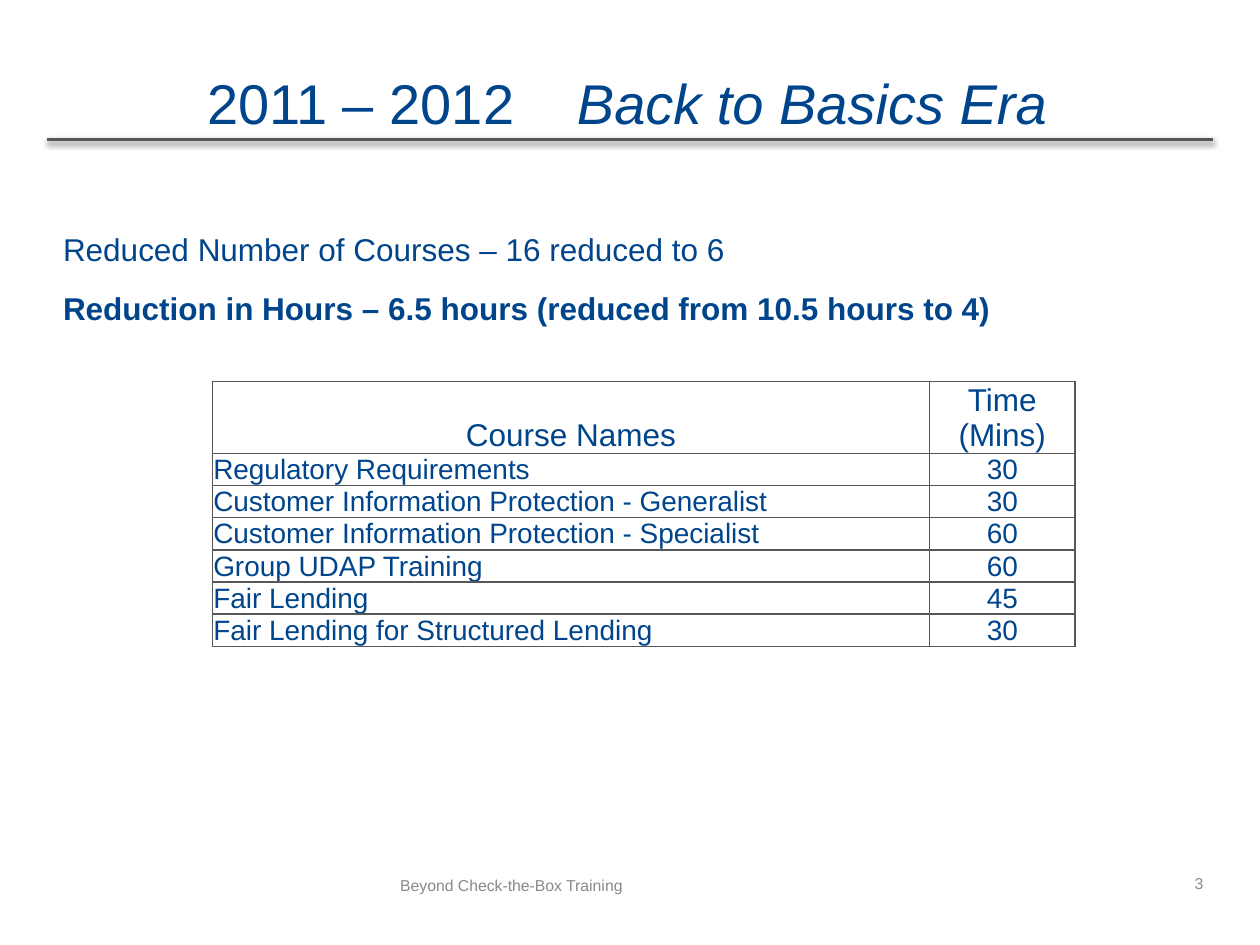
from lxml import etree
from pptx import Presentation
from pptx import util as u
from pptx.dml.color import RGBColor
from pptx.enum import shapes, text
from pptx.oxml import parse_xml
from pptx.oxml.ns import nsdecls, qn

BLUE = RGBColor(0x00, 0x45, 0x8B)
GRAY = RGBColor(0x89, 0x89, 0x89)
RULE = RGBColor(0x57, 0x57, 0x57)

COURSES = [
    ("Regulatory Requirements", 30),
    ("Customer Information Protection - Generalist", 30),
    ("Customer Information Protection - Specialist", 60),
    ("Group UDAP Training", 60),
    ("Fair Lending", 45),
    ("Fair Lending for Structured Lending", 30),
]


class Deck:
    font = "Arial"

    def __init__(self, width, height):
        self.prs = Presentation()
        self.prs.slide_width, self.prs.slide_height = u.Cm(width), u.Cm(height)
        self.s = self.prs.slides.add_slide(self.prs.slide_layouts[1])

    def style(self, p, size, color=BLUE, align=text.PP_ALIGN.LEFT):
        p.alignment = align
        for r in p.runs:
            r.font.name, r.font.size = self.font, u.Pt(size)
            r.font.color.rgb = color

    def frame(self, sp, box):
        """Place a text shape and return its text frame without insets."""
        sp.left, sp.top, sp.width, sp.height = (u.Cm(v) for v in box)
        tf = sp.text_frame
        tf.word_wrap = True
        tf.auto_size = text.MSO_AUTO_SIZE.NONE
        tf.vertical_anchor = text.MSO_ANCHOR.TOP
        tf.margin_left = tf.margin_top = tf.margin_right = tf.margin_bottom = 0
        return tf

    def title(self, years, era, box, size=32):
        p = self.frame(self.s.shapes.title, box).paragraphs[0]
        p.line_spacing = 0.9
        for words in (years, " ", era):
            p.add_run().text = words
        self.style(p, size, align=text.PP_ALIGN.CENTER)
        gap, name = p.runs[1:]
        gap.font._element.set("spc", "2670")  # widens the one space
        name.font.italic = True

    def body(self, lines, box, size=18):
        tf = self.frame(self.s.placeholders[1], box)
        tf.text = "\n".join(lines)
        for i, p in enumerate(tf.paragraphs):
            pPr = p._p.get_or_add_pPr()
            pPr.set("marL", "0")
            pPr.set("indent", "0")
            etree.SubElement(pPr, qn("a:buNone"))
            p.space_before = u.Pt(12 if i else 0)
            self.style(p, size)
        tf.paragraphs[-1].runs[0].font.bold = True

    def note(self, words, box, size=9):
        tf = self.frame(self.s.shapes.add_textbox(0, 0, 0, 0), box)
        tf.text = words
        self.style(tf.paragraphs[0], size, GRAY, text.PP_ALIGN.RIGHT)

    def rule(self, x1, x2, y):
        """Draw a horizontal line with a soft shadow below it."""
        ln = self.s.shapes.add_connector(
            shapes.MSO_CONNECTOR.STRAIGHT, u.Cm(x1), u.Cm(y), u.Cm(x2), u.Cm(y))
        ln.line.color.rgb, ln.line.width = RULE, u.Pt(2)
        ln._element.spPr.append(parse_xml(
            f'<a:effectLst {nsdecls("a")}>'
            f'<a:outerShdw blurRad="{u.Pt(3.1)}" dist="{u.Pt(1.6)}" dir="5400000"'
            ' rotWithShape="0"><a:srgbClr val="000000"><a:alpha val="38000"/>'
            '</a:srgbClr></a:outerShdw></a:effectLst>'))

    def borders(self, cell):
        tcPr = cell._tc.get_or_add_tcPr()
        for i, side in enumerate(("lnL", "lnR", "lnT", "lnB")):
            tcPr.insert(i, parse_xml(
                f'<a:{side} {nsdecls("a")} w="{u.Pt(1)}"><a:solidFill>'
                f'<a:srgbClr val="{RULE}"/></a:solidFill></a:{side}>'))

    def table(self, rows, left, top, widths, heights):
        t = self.s.shapes.add_table(
            len(rows), len(widths), u.Cm(left), u.Cm(top),
            u.Cm(sum(widths)), u.Cm(sum(heights))).table
        t.first_row = t.horz_banding = False
        for col, w in zip(t.columns, widths):
            col.width = u.Cm(w)
        for i, (row, h) in enumerate(zip(rows, heights)):
            t.rows[i].height = u.Cm(h)
            for j, value in enumerate(row):
                cell = t.cell(i, j)
                name = i > 0 and j == 0
                cell.text = str(value)
                cell.margin_left = cell.margin_right = cell.margin_top = u.Cm(0.02)
                cell.margin_bottom = 0
                cell.vertical_anchor = (text.MSO_ANCHOR.MIDDLE if name
                                        else text.MSO_ANCHOR.BOTTOM)
                cell.fill.background()
                self.borders(cell)
                self.style(cell.text_frame.paragraphs[0], 16 if i else 18,
                           align=text.PP_ALIGN.LEFT if name else text.PP_ALIGN.CENTER)


def main():
    d = Deck(25.4, 19.05)
    d.title("2011 – 2012", "Back to Basics Era", (1.05, 1.53, 23.19, 2.84))
    d.body(["Reduced Number of Courses – 16 reduced to 6",
            "Reduction in Hours – 6.5 hours (reduced from 10.5 hours to 4)"],
           (1.27, 4.64, 23.19, 2.5))
    d.note("Beyond Check-the-Box Training", (4.29, 17.65, 8.26, 0.38))
    d.note("3", (23.5, 17.62, 0.76, 0.38))
    d.rule(0.94, 24.46, 2.81)
    d.table([("Course Names", "Time (Mins)")] + COURSES, 4.28, 7.69,
            (14.46, 2.93), [1.45] + [0.64] * len(COURSES))
    d.prs.save("out.pptx")


if __name__ == "__main__":
    main()
